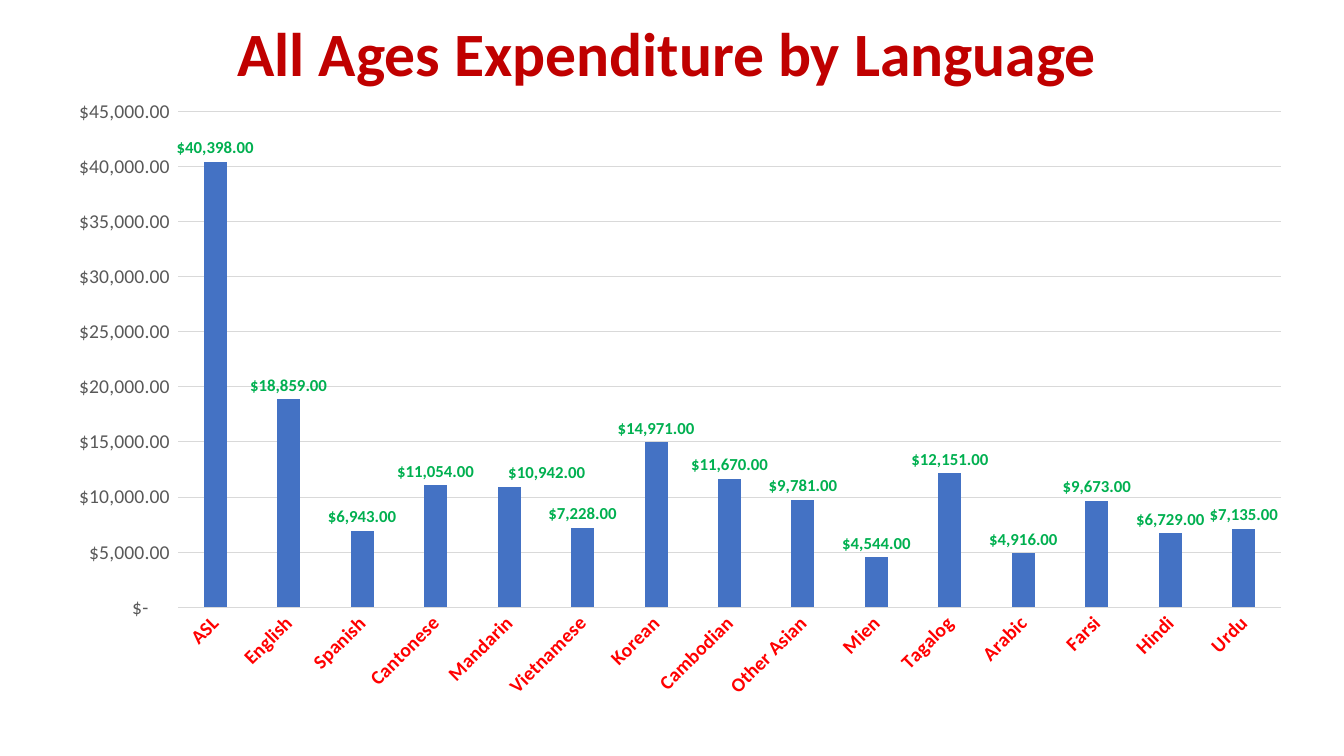
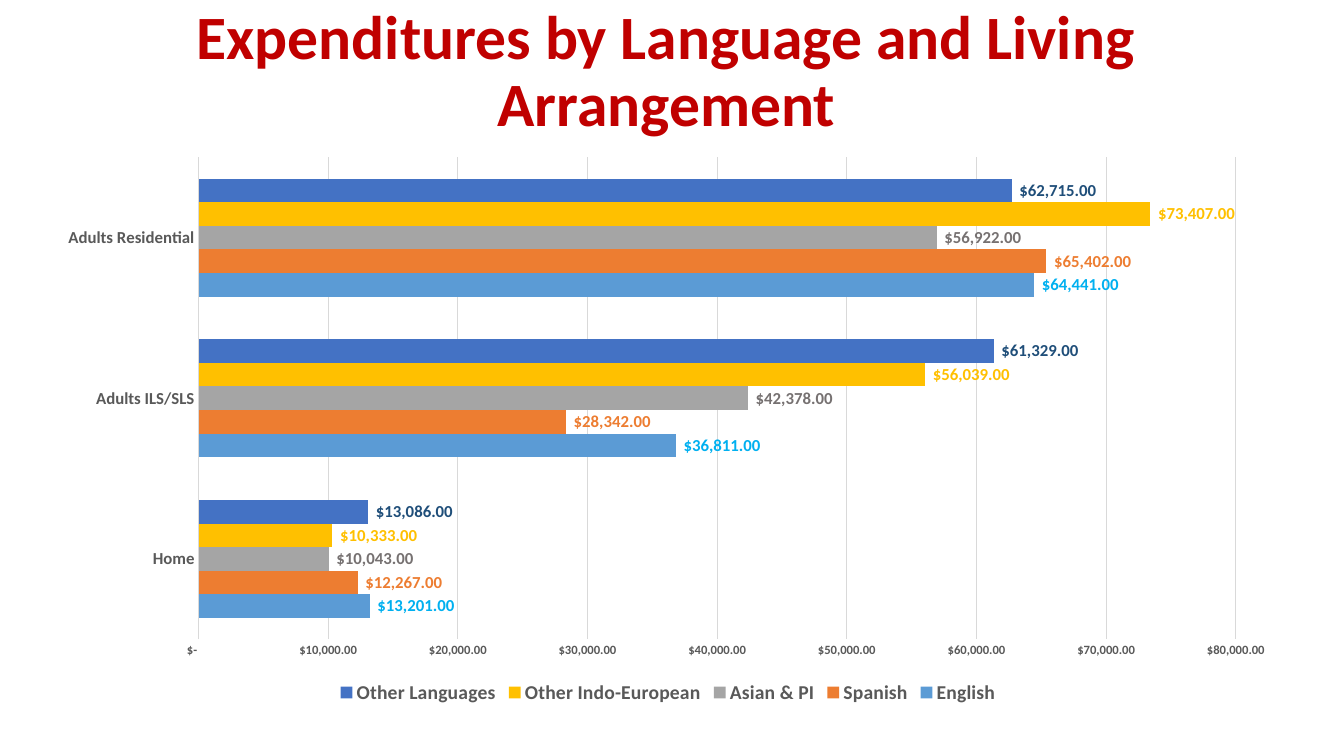
from copy import deepcopy

from lxml import etree
from pptx import Presentation
from pptx.chart.data import CategoryChartData
from pptx.dml.color import RGBColor
from pptx.enum.chart import XL_CHART_TYPE, XL_LABEL_POSITION, XL_LEGEND_POSITION, XL_TICK_MARK
from pptx.enum.text import MSO_ANCHOR, PP_ALIGN
from pptx.oxml.ns import qn
from pptx.util import Inches, Pt

COLUMNS = XL_CHART_TYPE.COLUMN_CLUSTERED
BARS = XL_CHART_TYPE.BAR_CLUSTERED
OUTSIDE_END = XL_LABEL_POSITION.OUTSIDE_END
LEGEND_BOTTOM = XL_LEGEND_POSITION.BOTTOM
NO_TICK = XL_TICK_MARK.NONE
MIDDLE = MSO_ANCHOR.MIDDLE
CENTER = PP_ALIGN.CENTER

THEME = {
    "font": "Calibri",
    "title": {"size": 44, "color": "C00000", "bold": True},
    "legend": {"size": 14, "color": "595959", "bold": True},
    "label_size": 12,
    "grid_color": "D9D9D9",
    "grid_width": 0.75,
    "currency": '_("$"* #,##0.00_);_("$"* \\(#,##0.00\\);_("$"* "-"??_);_(@_)',
}

SLIDES = [
    {
        "title": "All Ages Expenditure by Language",
        "title_box": (0.87, 0.14, 11.5, 0.84),
        "chart_box": (0.49, 0.86, 12.46, 6.19),
        "type": COLUMNS,
        "plot": {"gap_width": 219, "overlap": -27},
        "scale": {"minimum_scale": 0, "maximum_scale": 45000, "major_unit": 5000},
        "category_font": {"size": 14, "color": "FF0000", "bold": True},
        "value_font": {"size": 14, "color": "595959", "bold": False},
        "category_angle": -45,
        "legend": False,
        "categories": ["ASL", "English", "Spanish", "Cantonese", "Mandarin", "Vietnamese",
                       "Korean", "Cambodian", "Other Asian", "Mien", "Tagalog", "Arabic",
                       "Farsi", "Hindi", "Urdu"],
        # name, bar colour, label colour, values
        "series": [
            ("Series 1", "4472C4", "00B050",
             [40398, 18859, 6943, 11054, 10942, 7228, 14971, 11670, 9781, 4544,
              12151, 4916, 9673, 6729, 7135]),
        ],
        "moved_label": {"category": "Mandarin", "x": 0.03, "y": 0},
    },
    {
        "title": "Expenditures by Language and Living Arrangement",
        "title_box": (0.86, 0, 11.5, 1.45),
        "chart_box": (0.43, 1.45, 12.39, 5.58),
        "type": BARS,
        "plot": {"gap_width": 182, "overlap": 0},
        "scale": {"minimum_scale": 0, "maximum_scale": 80000, "major_unit": 10000},
        "category_font": {"size": 12, "color": "595959", "bold": True},
        "value_font": {"size": 9, "color": "595959", "bold": True},
        "category_angle": None,
        "legend": True,
        "categories": ["Home", "Adults ILS/SLS", "Adults Residential"],
        "series": [
            ("English", "5B9BD5", "00B0F0", [13201, 36811, 64441]),
            ("Spanish", "ED7D31", "ED7D31", [12267, 28342, 65402]),
            ("Asian & PI", "A5A5A5", "767171", [10043, 42378, 56922]),
            ("Other Indo-European", "FFC000", "FFC000", [10333, 56039, 73407]),
            ("Other Languages", "4472C4", "1F4E79", [13086, 61329, 62715]),
        ],
        "moved_label": None,
    },
]


def style_font(font, size, color, bold):
    font.name = THEME["font"]
    font.size = Pt(size)
    font.bold = bold
    font.color.rgb = RGBColor.from_string(color)


def move_label(series_labels, index, x, y):
    """Shift one data label by fractions of the chart size, keeping the series style."""
    label = etree.Element(qn("c:dLbl"))
    etree.SubElement(label, qn("c:idx"), val=str(index))
    layout = etree.SubElement(label, qn("c:layout"))
    manual = etree.SubElement(layout, qn("c:manualLayout"))
    for tag, value in (("c:x", x), ("c:y", y)):
        etree.SubElement(manual, qn(tag), val=str(value))
    for child in series_labels:
        if child.tag != qn("c:showLeaderLines"):
            label.append(deepcopy(child))
    series_labels.insert(0, label)


presentation = Presentation()
presentation.slide_width = Inches(13.33)
presentation.slide_height = Inches(7.5)
blank_layout = presentation.slide_layouts[6]

for content in SLIDES:
    slide = presentation.slides.add_slide(blank_layout)

    title_frame = slide.shapes.add_textbox(*map(Inches, content["title_box"])).text_frame
    title_frame.word_wrap = True
    title_frame.vertical_anchor = MIDDLE
    paragraph = title_frame.paragraphs[0]
    paragraph.alignment = CENTER
    paragraph.line_spacing = 0.9
    run = paragraph.add_run()
    run.text = content["title"]
    style_font(run.font, **THEME["title"])

    chart_data = CategoryChartData(number_format=THEME["currency"])
    chart_data.categories = content["categories"]
    for name, _, _, values in content["series"]:
        chart_data.add_series(name, values)
    chart = slide.shapes.add_chart(
        content["type"], *map(Inches, content["chart_box"]), chart_data).chart
    chart.font.name = THEME["font"]
    chart.has_title = False

    chart.has_legend = content["legend"]
    if chart.has_legend:
        chart.legend.position = LEGEND_BOTTOM
        chart.legend.include_in_layout = False
        style_font(chart.legend.font, **THEME["legend"])

    category_axis, value_axis = chart.category_axis, chart.value_axis
    for axis, font_key in ((category_axis, "category_font"), (value_axis, "value_font")):
        axis.major_tick_mark = axis.minor_tick_mark = NO_TICK
        style_font(axis.tick_labels.font, **content[font_key])
    for name, value in content["scale"].items():
        setattr(value_axis, name, value)
    value_axis.tick_labels.number_format = THEME["currency"]
    value_axis.tick_labels.number_format_is_linked = False
    value_axis.format.line.fill.background()
    value_axis.has_major_gridlines = True
    for line in (category_axis.format.line, value_axis.major_gridlines.format.line):
        line.color.rgb = RGBColor.from_string(THEME["grid_color"])
        line.width = Pt(THEME["grid_width"])
    if content["category_angle"] is not None:
        body = chart._chartSpace.xpath(".//c:catAx/c:txPr/a:bodyPr")[0]
        body.set("rot", str(content["category_angle"] * 60000))
        body.set("vert", "horz")

    plot = chart.plots[0]
    plot.vary_by_categories = False
    for name, value in content["plot"].items():
        setattr(plot, name, value)
    for series, (_, bar_color, label_color, _) in zip(plot.series, content["series"]):
        series.invert_if_negative = False
        series.format.fill.solid()
        series.format.fill.fore_color.rgb = RGBColor.from_string(bar_color)
        labels = series.data_labels
        labels.show_value = True
        labels.position = OUTSIDE_END
        labels.number_format = THEME["currency"]
        labels.number_format_is_linked = False
        style_font(labels.font, THEME["label_size"], label_color, True)

    moved = content["moved_label"]
    if moved:
        series_labels = chart._chartSpace.xpath(".//c:ser/c:dLbls")[0]
        move_label(series_labels, content["categories"].index(moved["category"]),
                   moved["x"], moved["y"])

presentation.save("out.pptx")
